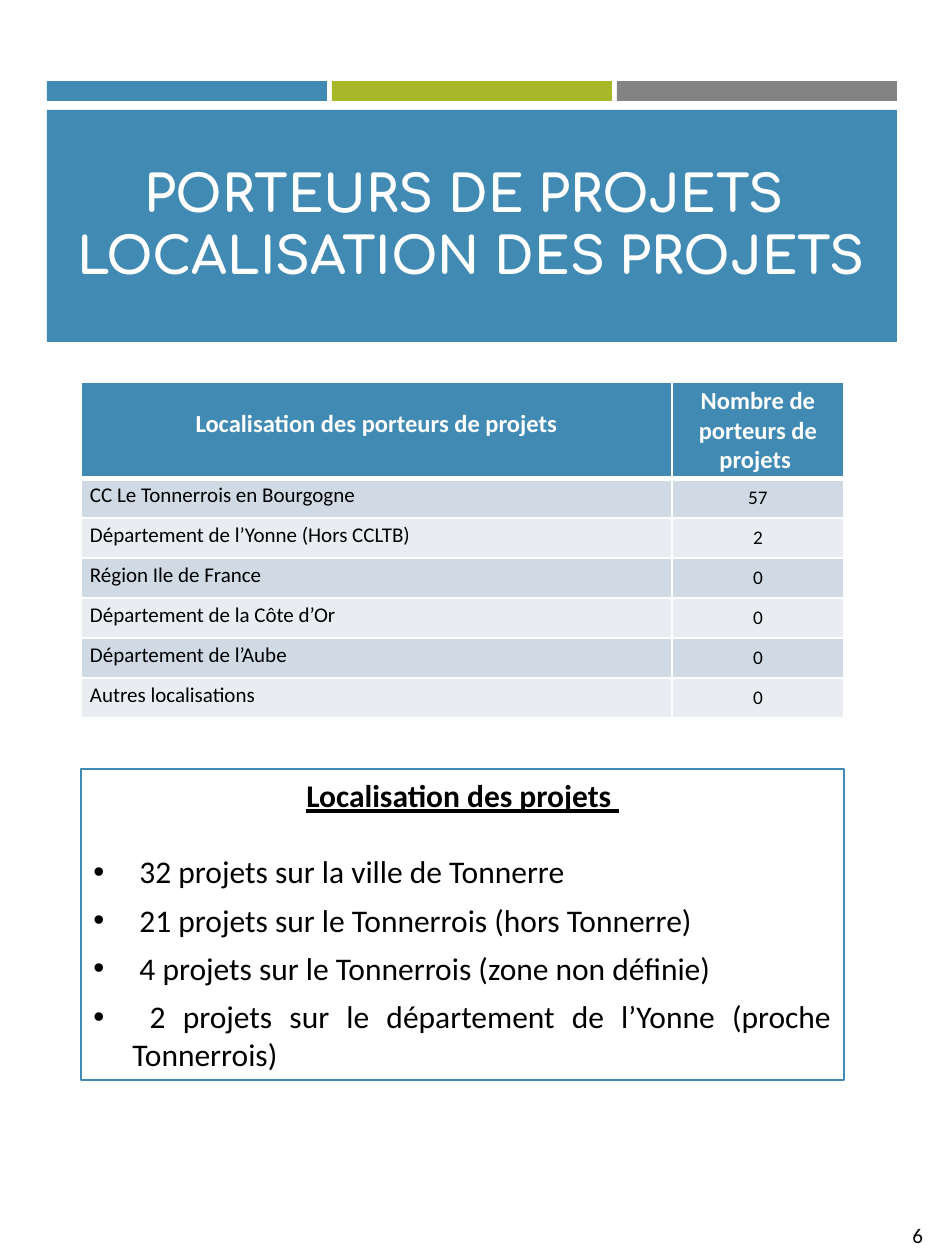
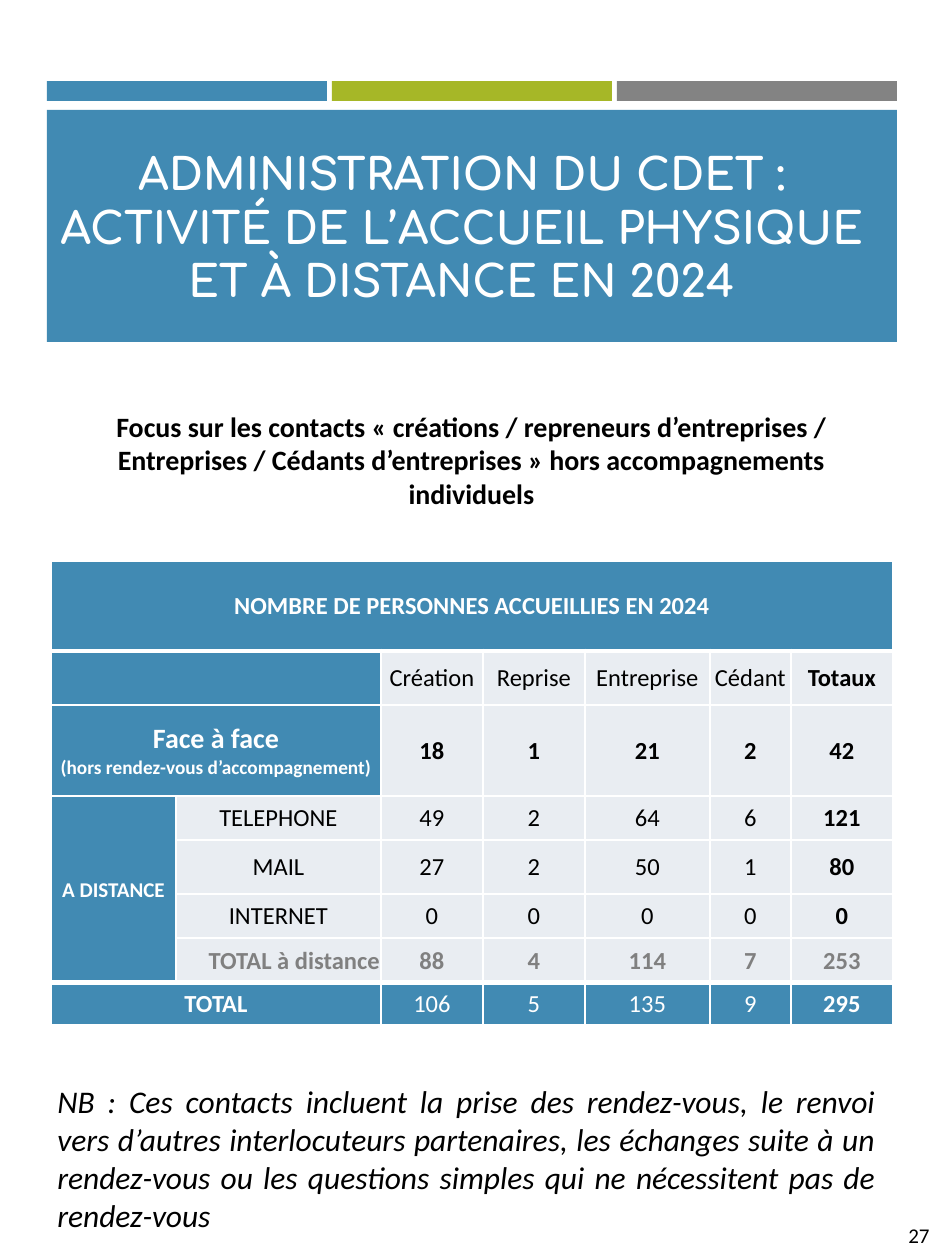
from lxml import etree
from pptx import Presentation
from pptx.dml.color import RGBColor
from pptx.enum import shapes, text
from pptx.oxml import ns
from pptx.util import Emu, Pt

EMU_PER_PX = 914400 / 126
BLUE = RGBColor(0x41, 0x8A, 0xB3)
GREEN = RGBColor(0xA6, 0xB7, 0x27)
GRAY = RGBColor(0x83, 0x83, 0x83)
SUBTOTAL_GRAY = RGBColor(0x80, 0x80, 0x80)
ROW_DARK = RGBColor(0xCF, 0xDA, 0xE5)
ROW_LIGHT = RGBColor(0xE9, 0xED, 0xF2)
WHITE = RGBColor(0xFF, 0xFF, 0xFF)
BLACK = RGBColor(0, 0, 0)
BODY_FONT, TITLE_FONT = "Calibri", "Comfortaa"
LEFT, CENTER, RIGHT, JUSTIFY = (
    text.PP_ALIGN.LEFT, text.PP_ALIGN.CENTER, text.PP_ALIGN.RIGHT, text.PP_ALIGN.JUSTIFY)
TOP, MIDDLE, BOTTOM = text.MSO_ANCHOR.TOP, text.MSO_ANCHOR.MIDDLE, text.MSO_ANCHOR.BOTTOM


def px(length):
    return Emu(round(length * EMU_PER_PX))


def place(box):
    return [px(length) for length in box]


def style(paragraph, size, color=BLACK, bold=False, italic=False, align=LEFT, name=BODY_FONT):
    paragraph.alignment = align
    font = paragraph.font
    font.name, font.size, font.bold, font.italic = name, Pt(size), bold, italic
    font.color.rgb = color


def add_rectangle(slide, box, fill=None, line=None):
    shape = slide.shapes.add_shape(shapes.MSO_SHAPE.RECTANGLE, *place(box))
    shape.shadow.inherit = False
    if fill is None:
        shape.fill.background()
    else:
        shape.fill.solid()
        shape.fill.fore_color.rgb = fill
    if line is None:
        shape.line.fill.background()
    else:
        shape.line.color.rgb = line
        shape.line.width = Pt(0.75)
    return shape


def add_text(slide, box, content, size, anchor=TOP, **options):
    frame = slide.shapes.add_textbox(*place(box)).text_frame
    frame.word_wrap = True
    frame.vertical_anchor = anchor
    paragraph = frame.paragraphs[0]
    paragraph.text = content
    style(paragraph, size, **options)
    return paragraph


def add_header(slide, title, title_box, size, line_height):
    left, bar_width, pitch = 47, 280, 285
    for index, color in enumerate((BLUE, GREEN, GRAY)):
        add_rectangle(slide, (left + index * pitch, 81, bar_width, 20), color)
    add_rectangle(slide, (left, 110, 2 * pitch + bar_width, 232), BLUE)
    paragraph = add_text(slide, title_box, title, size, BOTTOM, color=WHITE, bold=True,
                         align=CENTER, name=TITLE_FONT)
    paragraph.line_spacing = Pt(line_height)


def add_page_number(slide, left, number):
    add_text(slide, (left, 1216, 945 - left, 38), number, 12)


def add_grid(slide, left, top, widths, heights):
    table = slide.shapes.add_table(
        len(heights), len(widths), *place((left, top, sum(widths), sum(heights)))).table
    for column, width in zip(table.columns, widths):
        column.width = px(width)
    for row, height in zip(table.rows, heights):
        row.height = px(height)
    return table


def set_borders(cell, top, bottom):
    properties = cell._tc.get_or_add_tcPr()
    edges = (("lnL", 1), ("lnR", 1), ("lnT", top), ("lnB", bottom))
    for index, (edge, points) in enumerate(edges):
        line = etree.Element(ns.qn(f"a:{edge}"), w=str(Pt(points)))
        fill = etree.SubElement(line, ns.qn("a:solidFill"))
        etree.SubElement(fill, ns.qn("a:srgbClr"), val=str(WHITE))
        properties.insert(index, line)


def fill_cell(cell, content, fill, margins, top=1, bottom=1, anchor=MIDDLE, **options):
    cell.fill.solid()
    cell.fill.fore_color.rgb = fill
    set_borders(cell, top, bottom)
    cell.margin_left, cell.margin_top, cell.margin_right, cell.margin_bottom = place(margins)
    cell.vertical_anchor = anchor
    if content:
        cell.text = content
        for paragraph in cell.text_frame.paragraphs:
            style(paragraph, **options)


def add_location_table(slide, left, top):
    rows = [
        ("Localisation des porteurs de projets", "Nombre de porteurs de projets "),
        ("CC Le Tonnerrois en Bourgogne", "57"),
        ("Département de l’Yonne (Hors CCLTB)", "2"),
        ("Région Ile de France", "0"),
        ("Département de la Côte d’Or", "0"),
        ("Département de l’Aube", "0"),
        ("Autres localisations", "0"),
    ]
    table = add_grid(slide, left, top, (591, 172), [96] + [40] * (len(rows) - 1))
    margins = (9, 4, 9, 4)
    header = dict(fill=BLUE, bottom=3, size=14, color=WHITE, bold=True, align=CENTER)
    fill_cell(table.cell(0, 0), rows[0][0], margins=(9, 27, 9, 4), anchor=TOP, **header)
    fill_cell(table.cell(0, 1), rows[0][1], margins=margins, **header)
    for index, (place_name, count) in enumerate(rows[1:], 1):
        shared = dict(fill=ROW_DARK if index % 2 else ROW_LIGHT, margins=margins,
                      top=3 if index == 1 else 1)
        fill_cell(table.cell(index, 0), place_name, anchor=TOP, size=12, **shared)
        fill_cell(table.cell(index, 1), count, size=11, align=CENTER, **shared)


def add_project_list(slide, box):
    frame = add_rectangle(slide, box, line=BLUE).text_frame
    frame.word_wrap = True
    frame.vertical_anchor = MIDDLE
    heading = frame.paragraphs[0]
    heading.text = "Localisation des projets "
    style(heading, 18, bold=True, align=CENTER)
    heading.font.underline = True
    heading.space_after = Pt(22)
    for item in (
        " 32 projets sur la ville de Tonnerre",
        " 21 projets sur le Tonnerrois (hors Tonnerre)",
        " 4 projets sur le Tonnerrois (zone non définie)",
        " 2 projets sur le département de l’Yonne (proche Tonnerrois)",
    ):
        paragraph = frame.add_paragraph()
        paragraph.text = item
        paragraph.space_after = Pt(6)
        properties = paragraph._p.get_or_add_pPr()
        properties.set("marL", str(px(39)))
        properties.set("indent", str(-px(39)))
        etree.SubElement(properties, ns.qn("a:buFont"), typeface="Arial")
        etree.SubElement(properties, ns.qn("a:buChar"), char="•")
        style(paragraph, 18, align=JUSTIFY)


def add_contact_table(slide, left, top):
    rows = [
        ("NOMBRE DE PERSONNES ACCUEILLIES EN 2024", "", "", "", "", "", ""),
        ("", "", "Création", "Reprise", "Entreprise", "Cédant", "Totaux"),
        ("Face à face\n(hors rendez-vous d’accompagnement)", "", "18", "1", "21", "2", "42"),
        ("A DISTANCE", "TELEPHONE", "49", "2", "64", "6", "121"),
        ("", "MAIL", "27", "2", "50", "1", "80"),
        ("", "INTERNET", "0", "0", "0", "0", "0"),
        ("", "TOTAL à distance", "88", "4", "114", "7", "253"),
        ("TOTAL", "", "106", "5", "135", "9", "295"),
    ]
    title_row, face_row, remote_row, subtotal_row, total_row = 0, 2, 3, 6, 7
    heavy_tops = {1, total_row}
    table = add_grid(slide, left, top, (125, 205, 102, 102, 125, 81, 102),
                     (90, 54, 91, 44, 54, 44, 45, 42))
    for row, values in enumerate(rows):
        for column, value in enumerate(values):
            is_blue = row in (title_row, total_row) or column == 0
            is_subtotal = row == subtotal_row and column > 0
            fill_cell(
                table.cell(row, column), value, BLUE if is_blue else ROW_LIGHT, (1, 1, 1, 0),
                top=3 if row in heavy_tops else 1,
                bottom=3 if row + 1 in heavy_tops else 1,
                size=12 if (row, column) == (remote_row, 0) else 14,
                color=WHITE if is_blue else SUBTOTAL_GRAY if is_subtotal else BLACK,
                bold=column in (0, 6) or row in (face_row, subtotal_row),
                align=RIGHT if is_subtotal and column == 1 else CENTER)
    face_label = table.cell(face_row, 0).text_frame.paragraphs
    for paragraph, size in zip(face_label, (16, 11)):
        paragraph.font.size = Pt(size)
    table.cell(title_row, 0).merge(table.cell(title_row, 6))
    for row in (1, face_row, total_row):
        table.cell(row, 0).merge(table.cell(row, 1))
    table.cell(remote_row, 0).merge(table.cell(subtotal_row, 0))


def build_location_slide(slide):
    add_header(slide, "PORTEURS DE PROJETS \vLOCALISATION DES PROJETS",
               (45, 126, 853, 165), 29, 35.4)
    add_location_table(slide, 81, 382)
    add_project_list(slide, (81, 769, 763, 311))
    add_page_number(slide, 900, "6")


def build_contact_slide(slide):
    add_header(slide, "ADMINISTRATION DU CDET : ACTIVITÉ DE L’ACCUEIL PHYSIQUE ET À DISTANCE EN 2024",
               (40, 113, 843, 199), 25, 30.3)
    add_text(slide, (50, 403, 843, 115),
             "Focus sur les contacts « créations / repreneurs d’entreprises / Entreprises / "
             "Cédants d’entreprises » hors accompagnements individuels",
             16, bold=True, align=CENTER)
    add_contact_table(slide, 51, 561)
    add_text(slide, (45, 1076, 843, 127),
             "NB : Ces contacts incluent la prise des rendez-vous, le renvoi vers d’autres "
             "interlocuteurs partenaires, les échanges suite à un rendez-vous ou les questions "
             "simples qui ne nécessitent pas de rendez-vous",
             18, italic=True, align=JUSTIFY)
    add_page_number(slide, 896, "27")


def main():
    presentation = Presentation()
    presentation.slide_width, presentation.slide_height = px(945), px(1260)
    for build in (build_location_slide, build_contact_slide):
        build(presentation.slides.add_slide(presentation.slide_layouts[6]))
    presentation.save("out.pptx")


if __name__ == "__main__":
    main()
